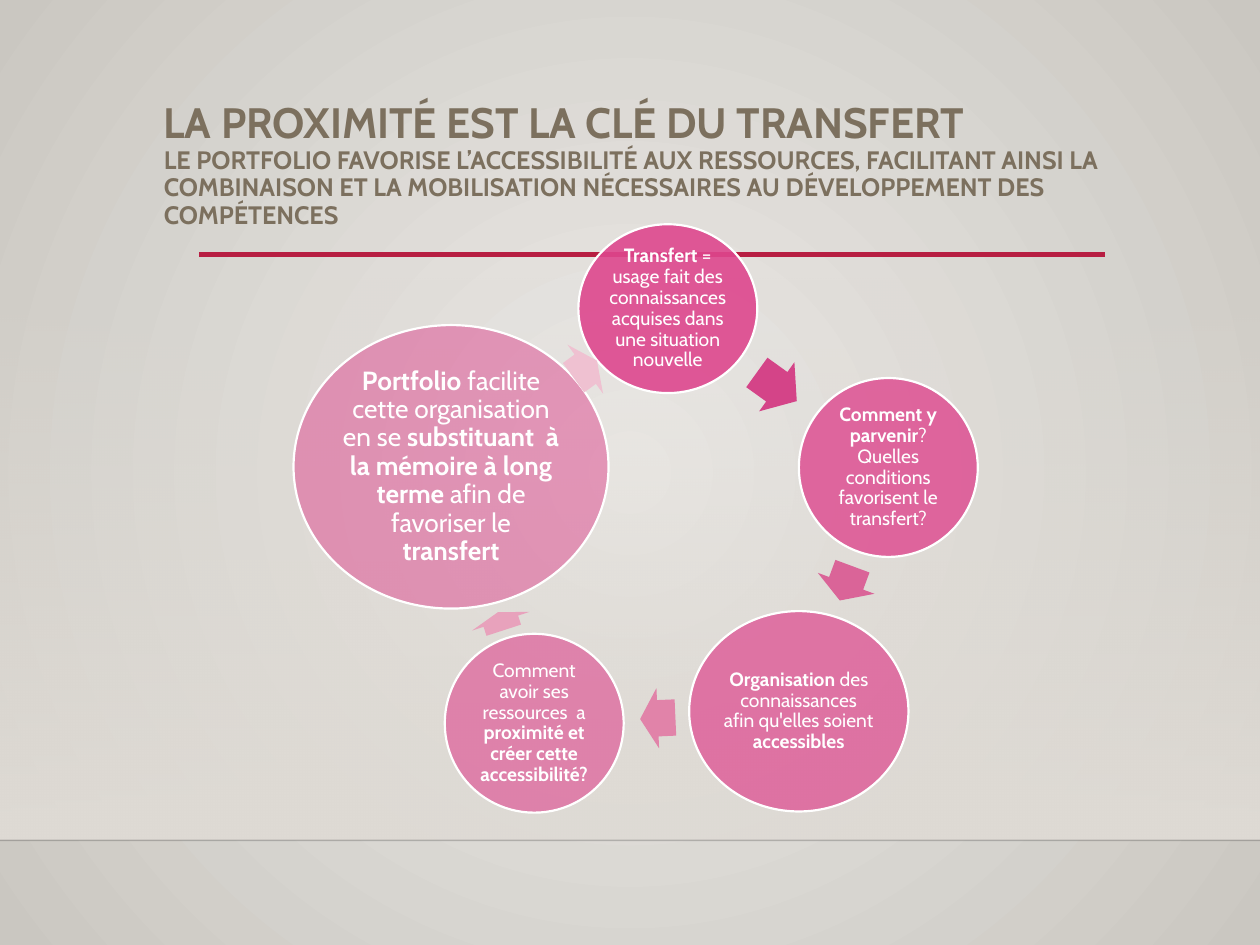
from dataclasses import dataclass

from lxml import etree
from pptx import Presentation
from pptx.dml.color import RGBColor
from pptx.enum.shapes import MSO_CONNECTOR, MSO_SHAPE
from pptx.enum.text import MSO_ANCHOR, MSO_AUTO_SIZE, PP_ALIGN
from pptx.oxml.ns import qn
from pptx.util import Inches, Pt

OVAL, ARROW, RECTANGLE = MSO_SHAPE.OVAL, MSO_SHAPE.RIGHT_ARROW, MSO_SHAPE.RECTANGLE
STRAIGHT = MSO_CONNECTOR.STRAIGHT
LEFT, CENTER = PP_ALIGN.LEFT, PP_ALIGN.CENTER
TOP, MIDDLE = MSO_ANCHOR.TOP, MSO_ANCHOR.MIDDLE
NO_AUTOFIT = MSO_AUTO_SIZE.NONE
COLUMNS, ROWS = 100, 75
SLIDE_WIDTH, SLIDE_HEIGHT = Inches(10), Inches(7.5)


@dataclass(frozen=True)
class Theme:
    font: str = "Cabin"
    heading: str = "7C705E"
    accent: str = "B71E42"
    bubble: str = "DE478E"
    light: str = "FFFFFF"
    glow: str = "ECEAE7"
    edge: str = "CAC7C1"
    wall: str = "DFDBD5"
    floor_line: str = "000001"
    title_size: float = 24.3
    subtitle_size: float = 14.4
    step_size: float = 11
    portfolio_size: float = 15


THEME = Theme()

STEPS = [
    ((45.9, 17.8, 14.2, 13.4), 90, THEME.step_size,
     [("Transfert", True),
      (" = usage fait des connaissances acquises dans une situation nouvelle", False)]),
    ((63.4, 30, 14.2, 14.2), 80, THEME.step_size,
     [("Comment y parvenir", True),
      ("? Quelles conditions favorisent le transfert?", False)]),
    ((54.7, 48.5, 17.4, 15.9), 70, THEME.step_size,
     [("Organisation", True), (" des connaissances afin qu'elles soient ", False),
      ("accessibles", True)]),
    ((35.3, 50.3, 14.2, 14.2), 60, THEME.step_size,
     [("Comment avoir ses ressources  a ", False),
      ("proximité et créer cette accessibilité?", True)]),
    ((23.3, 25.8, 25, 22.5), 50, THEME.portfolio_size,
     [("Portfolio", True), (" facilite cette organisation en se ", False),
      ("substituant  à la mémoire à long terme ", True),
      ("afin de favoriser le ", False), ("transfert", True)]),
]

ARROWS = [
    ((59.7, 28.3, 3.9, 4.8), 35.7, "D44488"),
    ((65.7, 43.9, 2.9, 4.8), 110.3, "DA6498"),
    ((50.8, 54.6, 2.8, 4.8), 177.5, "E183A9"),
    ((39, 46.9, 1.5, 4.8), 252, "E8A2BC"),
    ((45.3, 26.9, 2.3, 4.8), 324, "EFC1D1"),
]


def column(count):
    return round(SLIDE_WIDTH * count / COLUMNS)


def row(count):
    return round(SLIDE_HEIGHT * count / ROWS)


def place(cells):
    left, top, width, height = cells
    return column(left), row(top), column(width), row(height)


def set_alpha(properties, percent, index=0):
    colors = list(properties.iter(qn("a:srgbClr")))
    etree.SubElement(colors[index], qn("a:alpha"), val=str(percent * 1000))


def write_run(paragraph, text, *, size, color, bold=False):
    run = paragraph.add_run()
    run.text = text
    run.font.name = THEME.font
    run.font.size = Pt(size)
    run.font.bold = bold
    run.font.color.rgb = RGBColor.from_string(color)


def prepare_frame(frame, *, align, anchor, inset=None):
    frame.word_wrap = True
    frame.auto_size = NO_AUTOFIT
    frame.vertical_anchor = anchor
    if inset is not None:
        frame.margin_left = frame.margin_right = Inches(inset)
        frame.margin_top = frame.margin_bottom = Inches(inset)
    paragraph = frame.paragraphs[0]
    paragraph.alignment = align
    paragraph.line_spacing = 0.9
    return paragraph


def fill_gradient(fill, start, end):
    fill.gradient()
    for stop, color in zip(fill.gradient_stops, (start, end)):
        stop.color.rgb = RGBColor.from_string(color)


def paint_background(slide):
    fill = slide.background.fill
    fill_gradient(fill, THEME.glow, THEME.edge)
    gradient = next(slide.element.iter(qn("a:gradFill")))
    gradient.remove(gradient.find(qn("a:lin")))
    radial = etree.SubElement(gradient, qn("a:path"), path="circle")
    etree.SubElement(radial, qn("a:fillToRect"), l="50000", t="50000", r="50000", b="50000")


def add_wall(slide):
    wall = slide.shapes.add_shape(RECTANGLE, *place((0, 22, 100, 44.6)))
    wall.shadow.inherit = False
    wall.line.fill.background()
    fill_gradient(wall.fill, THEME.wall, THEME.wall)
    wall.fill.gradient_angle = 270
    set_alpha(wall.element.spPr, 0)


def add_rule(slide, start, end, level, color, weight, opacity=100):
    rule = slide.shapes.add_connector(
        STRAIGHT, column(start), row(level), column(end), row(level))
    rule.line.color.rgb = RGBColor.from_string(color)
    rule.line.width = Pt(weight)
    properties = rule._element.spPr
    set_alpha(properties, opacity)
    etree.SubElement(properties, qn("a:effectLst"))


def add_title(slide):
    title = slide.shapes.title
    title.left, title.top, title.width, title.height = place((12, 7.6, 76.2, 9.4))
    paragraph = prepare_frame(title.text_frame, align=LEFT, anchor=TOP)
    write_run(paragraph, "LA PROXIMITÉ EST LA CLÉ DU TRANSFERT",
              size=THEME.title_size, color=THEME.heading, bold=True)
    paragraph.add_line_break()
    line_break = paragraph._p.find(qn("a:br"))
    etree.SubElement(line_break, qn("a:rPr"), sz=str(round(THEME.title_size * 100)))
    write_run(paragraph,
              "LE PORTFOLIO FAVORISE L’ACCESSIBILITÉ AUX RESSOURCES, FACILITANT AINSI LA "
              "COMBINAISON ET LA MOBILISATION NÉCESSAIRES AU DÉVELOPPEMENT DES COMPÉTENCES",
              size=THEME.subtitle_size, color=THEME.heading, bold=True)


def add_solid(slide, kind, cells, color):
    solid = slide.shapes.add_shape(kind, *place(cells))
    solid.shadow.inherit = False
    solid.fill.solid()
    solid.fill.fore_color.rgb = RGBColor.from_string(color)
    return solid


def add_step(slide, cells, opacity, size, phrases):
    step = add_solid(slide, OVAL, cells, THEME.bubble)
    set_alpha(step.element.spPr, opacity)
    step.line.color.rgb = RGBColor.from_string(THEME.light)
    step.line.width = Pt(1.25)
    paragraph = prepare_frame(step.text_frame, align=CENTER, anchor=MIDDLE, inset=0.02)
    for text, bold in phrases:
        write_run(paragraph, text, size=size, color=THEME.light, bold=bold)


def add_arrow(slide, cells, angle, color):
    arrow = add_solid(slide, ARROW, cells, color)
    arrow.line.fill.background()
    arrow.adjustments[0] = 0.6
    arrow.adjustments[1] = 0.5
    arrow.rotation = angle


def main():
    deck = Presentation()
    deck.slide_width, deck.slide_height = SLIDE_WIDTH, SLIDE_HEIGHT
    slide = deck.slides.add_slide(deck.slide_layouts[5])
    paint_background(slide)
    add_wall(slide)
    add_rule(slide, 0, 100, 66.7, THEME.floor_line, 1, opacity=20)
    add_rule(slide, 15.8, 87.7, 20.2, THEME.accent, 2.5)
    add_title(slide)
    for step, arrow in zip(STEPS, ARROWS):
        add_step(slide, *step)
        add_arrow(slide, *arrow)
    deck.save("out.pptx")


if __name__ == "__main__":
    main()
